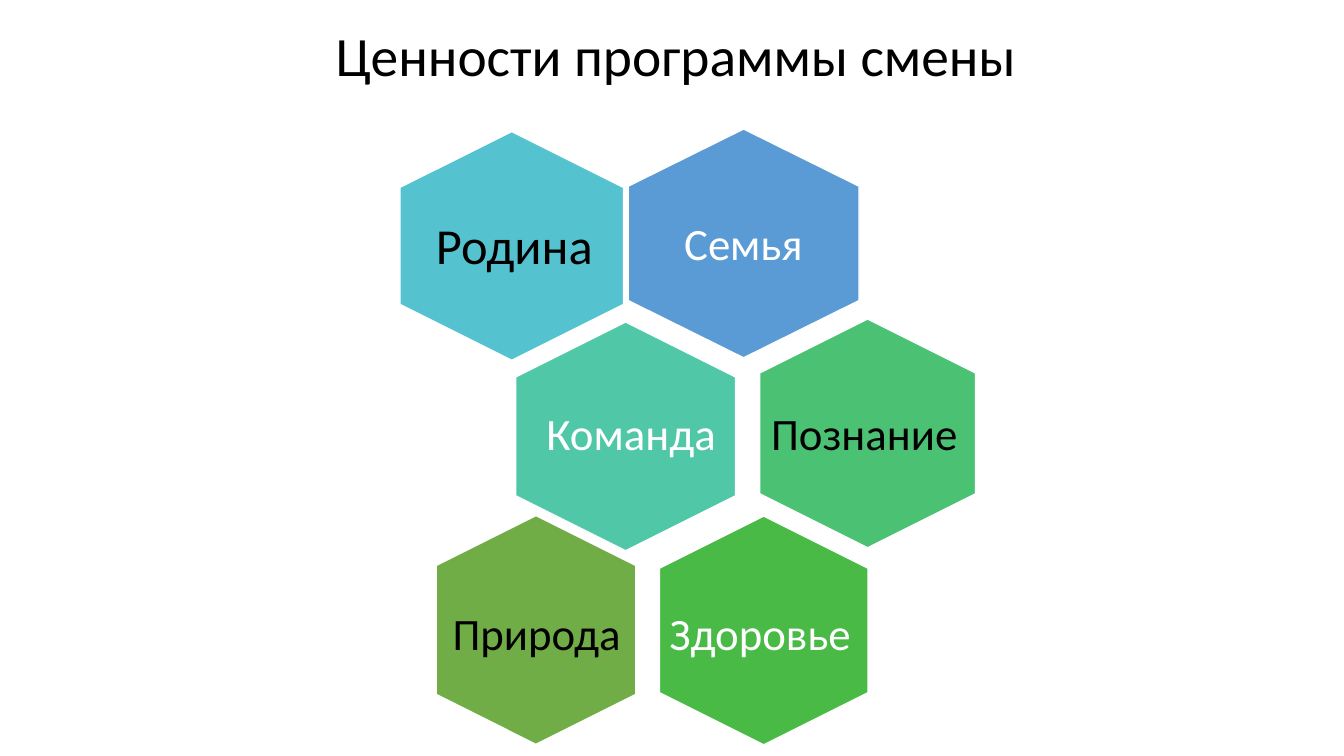
"""Slide with the values of the camp programme as a honeycomb."""
from pptx import Presentation
from pptx.dml.color import RGBColor
from pptx.enum.shapes import MSO_SHAPE
from pptx.enum.text import MSO_ANCHOR, PP_ALIGN
from pptx.util import Inches, Pt

HEXAGON = MSO_SHAPE.HEXAGON
MIDDLE = MSO_ANCHOR.MIDDLE
LEFT, CENTER, RIGHT = PP_ALIGN.LEFT, PP_ALIGN.CENTER, PP_ALIGN.RIGHT

BLACK = RGBColor(0x00, 0x00, 0x00)
WHITE = RGBColor(0xFF, 0xFF, 0xFF)
BLUE = RGBColor(0x5B, 0x9B, 0xD5)
CYAN = RGBColor(0x55, 0xC3, 0xCF)
TEAL = RGBColor(0x50, 0xC8, 0xA7)
MINT = RGBColor(0x4B, 0xC1, 0x74)
GREEN = RGBColor(0x4A, 0xBA, 0x46)
OLIVE = RGBColor(0x70, 0xAD, 0x47)

FONT = "Calibri"
HEX_LENGTH = 2.27

hexagons = [
    (6.24, 1.27, 2.29, BLUE),
    (3.94, 1.33, 2.22, CYAN),
    (5.07, 3.24, 2.18, TEAL),
    (7.47, 3.23, 2.14, MINT),
    (6.44, 5.22, 2.07, GREEN),
    (4.18, 5.26, 1.98, OLIVE),
]
labels = [
    ("Семья", (6.61, 1.65, 1.53, 1.52), 0.13, CENTER, 32, WHITE),
    ("Родина", (3.6, 1.79, 2.43, 1.27), 0.15, RIGHT, 36, BLACK),
    ("Познание", (7.55, 3.97, 2.07, 0.64), 0.1, LEFT, 32, BLACK),
    ("Команда", (5.32, 3.97, 1.9, 0.64), 0.1, LEFT, 32, WHITE),
    ("Природа", (4.39, 5.96, 1.89, 0.64), 0.1, LEFT, 32, BLACK),
    ("Здоровье", (6.54, 5.96, 2.02, 0.64), 0.1, LEFT, 32, WHITE),
]


def format_text(p, size, color, align):
    p.alignment = align
    p.font.name = FONT
    p.font.size = Pt(size)
    p.font.color.rgb = color


prs = Presentation()
prs.slide_width = Inches(13.33)
prs.slide_height = Inches(7.5)
s = prs.slides.add_slide(prs.slide_layouts[5])

title = s.shapes.title
title.left, title.top = Inches(3.23), Inches(0.29)
title.width, title.height = Inches(9.01), Inches(0.59)
tf = title.text_frame
tf.text = "Ценности программы смены"
tf.vertical_anchor = MIDDLE
tf.paragraphs[0].line_spacing = 0.9
format_text(tf.paragraphs[0], 39.6, BLACK, LEFT)

for left, top, height, color in hexagons:
    sp = s.shapes.add_shape(HEXAGON, Inches(left), Inches(top),
                            Inches(HEX_LENGTH), Inches(height))
    sp.rotation = 90
    sp.adjustments[0] = 0.25
    sp.shadow.inherit = False
    sp.fill.solid()
    sp.fill.fore_color.rgb = color
    sp.line.color.rgb = WHITE
    sp.line.width = Pt(1)

for text, box, inset, align, size, color in labels:
    tf = s.shapes.add_textbox(*map(Inches, box)).text_frame
    tf.word_wrap = align != LEFT
    tf.vertical_anchor = MIDDLE
    tf.margin_left = tf.margin_right = Inches(inset)
    tf.text = text
    format_text(tf.paragraphs[0], size, color, align)

prs.save("out.pptx")
